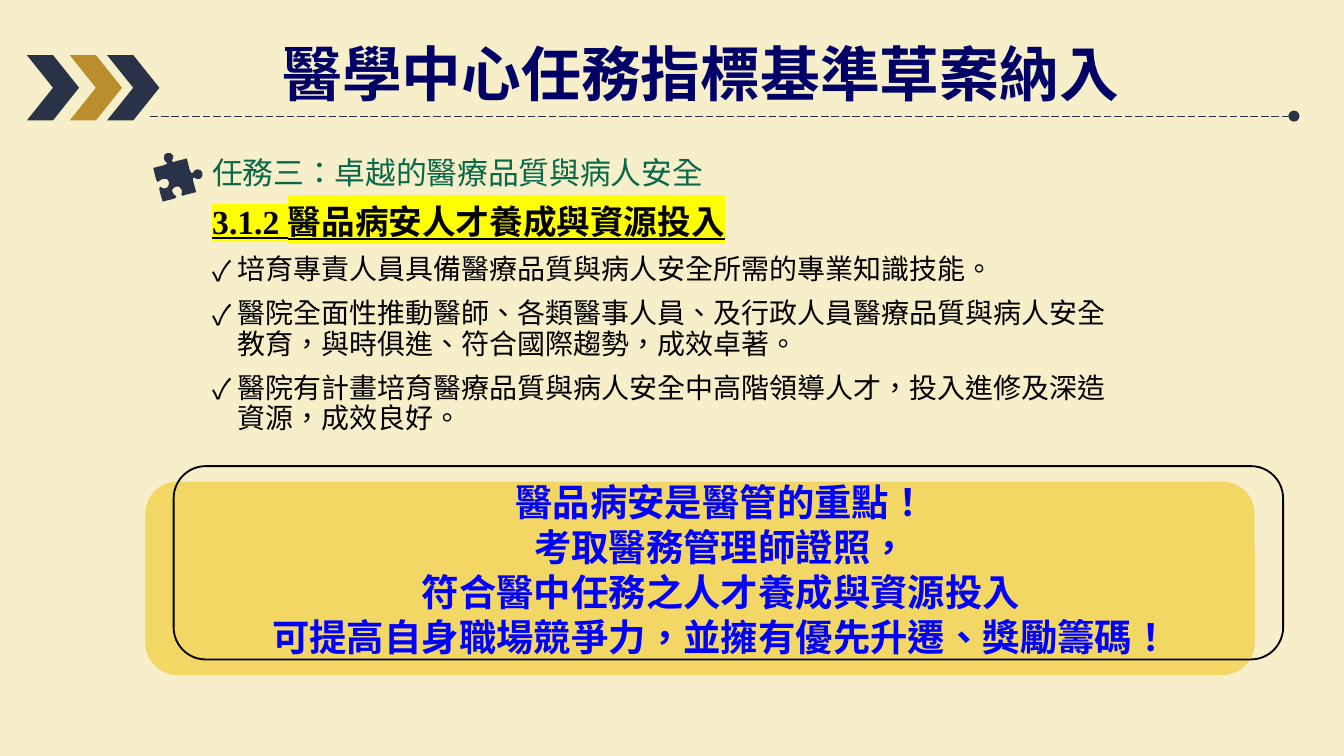
import pptx
import pptx.util
import pptx.dml.color
import pptx.enum.dml
import pptx.enum.shapes
import pptx.enum.text
import pptx.oxml
import pptx.oxml.ns
import lxml.etree

Pt = pptx.util.Pt
qn = pptx.oxml.ns.qn
RGB = pptx.dml.color.RGBColor.from_string
SHAPE = pptx.enum.shapes.MSO_SHAPE
ALIGN = pptx.enum.text.PP_ALIGN
CJK, LATIN = "Noto Sans CJK SC", "Times New Roman"
COLORS = {
    "cream": "F7EFCA", "navy": "293247", "gold": "BA8D2D", "yellow": "F2D764",
    "title": "000066", "green": "08684A", "black": "000000", "blue": "0000FF",
    "marker": "FFFF00",
}


def add_shape(shapes, kind, box, fill=None, line=None):
    sp = shapes.add_shape(kind, *[Pt(v) for v in box])
    sp.shadow.inherit = False
    if fill:
        sp.fill.solid()
        sp.fill.fore_color.rgb = RGB(COLORS[fill])
    else:
        sp.fill.background()
    if line:
        sp.line.color.rgb = RGB(COLORS[line])
        sp.line.width = Pt(1)
    else:
        sp.line.fill.background()
    return sp


def add_text(box, lines, wrap, **para):
    """Add a text box; each line is (text, colour, font values)."""
    tf = s.shapes.add_textbox(*[Pt(v) for v in box]).text_frame
    tf.word_wrap = wrap
    for i, (text, color, font) in enumerate(lines):
        p = tf.add_paragraph() if i else tf.paragraphs[0]
        for key, value in para.items():
            setattr(p, key, value)
        r = p.add_run()
        r.text = text
        r.font.color.rgb = RGB(COLORS[color])
        for key, value in font.items():
            setattr(r.font, key, value)
        rPr = r.font._element
        rPr.set("lang", "zh-TW")
        lxml.etree.SubElement(rPr, qn("a:ea")).set("typeface", CJK)
    return tf


prs = pptx.Presentation()
prs.slide_width, prs.slide_height = Pt(720), Pt(405)
s = prs.slides.add_slide(prs.slide_layouts[6])
s.background.fill.solid()
s.background.fill.fore_color.rgb = RGB(COLORS["cream"])

# Title rule with a dot at its right end
rule = s.shapes.add_connector(
    pptx.enum.shapes.MSO_CONNECTOR.STRAIGHT, Pt(80.6), Pt(62.2), Pt(693.2), Pt(62.2))
rule.line.color.rgb = RGB(COLORS["navy"])
rule.line.width = Pt(0.5)
rule.line.dash_style = pptx.enum.dml.MSO_LINE.LONG_DASH
tail = lxml.etree.SubElement(rule.line._get_or_add_ln(), qn("a:tailEnd"))
tail.set("type", "oval")
lxml.etree.SubElement(rule._element.spPr, qn("a:effectLst"))

# Chevrons
chevrons = s.shapes.add_group_shape()
for left, color in ((37.4, "gold"), (57.4, "navy"), (14.4, "navy")):
    add_shape(chevrons.shapes, SHAPE.CHEVRON, (left, 29.5, 28, 35), color)

add_text((144.2, 16, 466.6, 46),
         [("醫學中心任務指標基準草案納入", "title",
           {"size": Pt(32), "name": CJK, "bold": True})], False)

# Task and its criteria
item = {"size": Pt(15), "name": LATIN}
tf = add_text((106.6, 81, 498.2, 264), [
    ("任務三：卓越的醫療品質與病人安全", "green", {"size": Pt(16.5), "name": CJK}),
    ("3.1.2 醫品病安人才養成與資源投入", "black",
     {"size": Pt(18), "name": LATIN, "bold": True, "underline": True}),
    ("培育專責人員具備醫療品質與病人安全所需的專業知識技能。", "black", item),
    ("醫院全面性推動醫師、各類醫事人員、及行政人員醫療品質與病人安全教育，"
     "與時俱進、符合國際趨勢，成效卓著。", "black", item),
    ("醫院有計畫培育醫療品質與病人安全中高階領導人才，投入進修及深造資源，"
     "成效良好。", "black", item),
], True, line_spacing=0.9, space_before=Pt(7.5))

highlight = lxml.etree.Element(qn("a:highlight"))
lxml.etree.SubElement(highlight, qn("a:srgbClr")).set("val", COLORS["marker"])
heading = tf.paragraphs[1].runs[0].font._element
heading.find(qn("a:latin")).addprevious(highlight)
for p in tf.paragraphs[2:]:
    pPr = p._p.get_or_add_pPr()
    pPr.set("marL", str(Pt(13.5)))
    pPr.set("indent", str(-Pt(13.5)))
    lxml.etree.SubElement(pPr, qn("a:buFont")).set("typeface", CJK)
    lxml.etree.SubElement(pPr, qn("a:buChar")).set("char", "✓")

# Puzzle piece: cubic curves in hundredths of an inch, two controls and an end each
start = (122, 123)
curves = [
    (124, 122, 125, 122, 124, 121), (123, 120, 122, 120, 122, 117),
    (121, 114, 127, 112, 129, 116), (129, 118, 128, 118, 128, 120),
    (128, 121, 129, 121, 131, 120), (139, 118, 139, 118, 139, 118),
    (141, 126, 141, 126, 141, 126), (142, 129, 143, 129, 143, 129),
    (145, 127, 145, 126, 147, 126), (151, 126, 152, 131, 149, 133),
    (147, 134, 146, 133, 144, 132), (144, 132, 143, 133, 144, 136),
    (146, 143, 146, 143, 146, 143), (138, 145, 138, 145, 138, 145),
    (136, 146, 135, 146, 135, 145), (135, 143, 136, 143, 135, 141),
    (134, 137, 128, 139, 128, 142), (129, 145, 130, 145, 131, 146),
    (132, 147, 131, 147, 129, 148), (121, 150, 121, 150, 121, 150),
    (119, 143, 119, 143, 119, 143), (118, 140, 119, 139, 119, 139),
    (121, 140, 122, 141, 124, 140), (127, 138, 126, 132, 122, 133),
    (120, 133, 120, 134, 118, 135), (118, 136, 117, 136, 116, 133),
    (114, 125, 114, 125, 114, 125),
]
ends = [(Pt(c[4] * 0.72), Pt(c[5] * 0.72)) for c in curves]
builder = s.shapes.build_freeform(*[Pt(v * 0.72) for v in start])
builder.add_line_segments(ends, close=True)
puzzle = builder.convert_to_shape()
puzzle.shadow.inherit = False
puzzle.fill.solid()
puzzle.fill.fore_color.rgb = RGB(COLORS["navy"])
puzzle.line.fill.background()
# Bend each straight segment into its curve
segments = list(puzzle._element.iter(qn("a:lnTo")))
for segment, curve in zip(segments, curves):
    segment.tag = qn("a:cubicBezTo")
    bend = lxml.etree.Element(qn("a:cubicBezTo"))
    for x, y in zip(curve[::2], curve[1::2]):
        pt = lxml.etree.SubElement(bend, qn("a:pt"))
        pt.set("x", str(Pt(x * 0.72) - puzzle.left))
        pt.set("y", str(Pt(y * 0.72) - puzzle.top))
    segment.getparent().replace(segment, bend)

# Conclusion panel with an offset frame
panel = s.shapes.add_group_shape()
add_shape(panel.shapes, SHAPE.ROUNDED_RECTANGLE, (77.8, 258, 594.4, 103.6), "yellow")
add_shape(panel.shapes, SHAPE.ROUNDED_RECTANGLE, (93, 249.7, 594.4, 103.6), line="black")
bold_blue = {"size": Pt(20), "name": LATIN, "bold": True}
add_text((136.8, 253.4, 499, 104.4), [(text, "blue", bold_blue) for text in (
    "醫品病安是醫管的重點！",
    "考取醫務管理師證照，",
    "符合醫中任務之人才養成與資源投入",
    "可提高自身職場競爭力，並擁有優先升遷、獎勵籌碼！",
)], False, alignment=ALIGN.CENTER)

prs.save("out.pptx")
